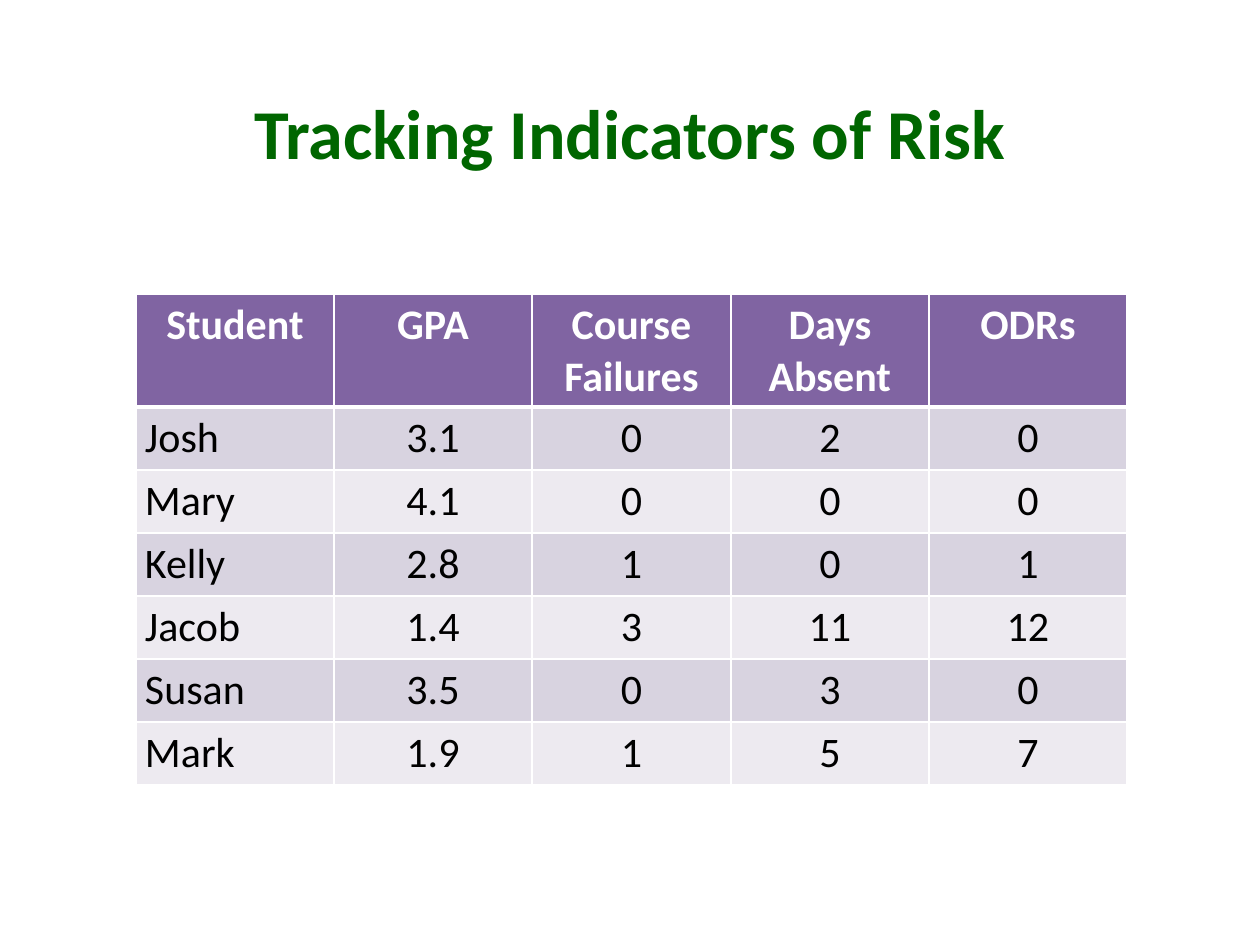
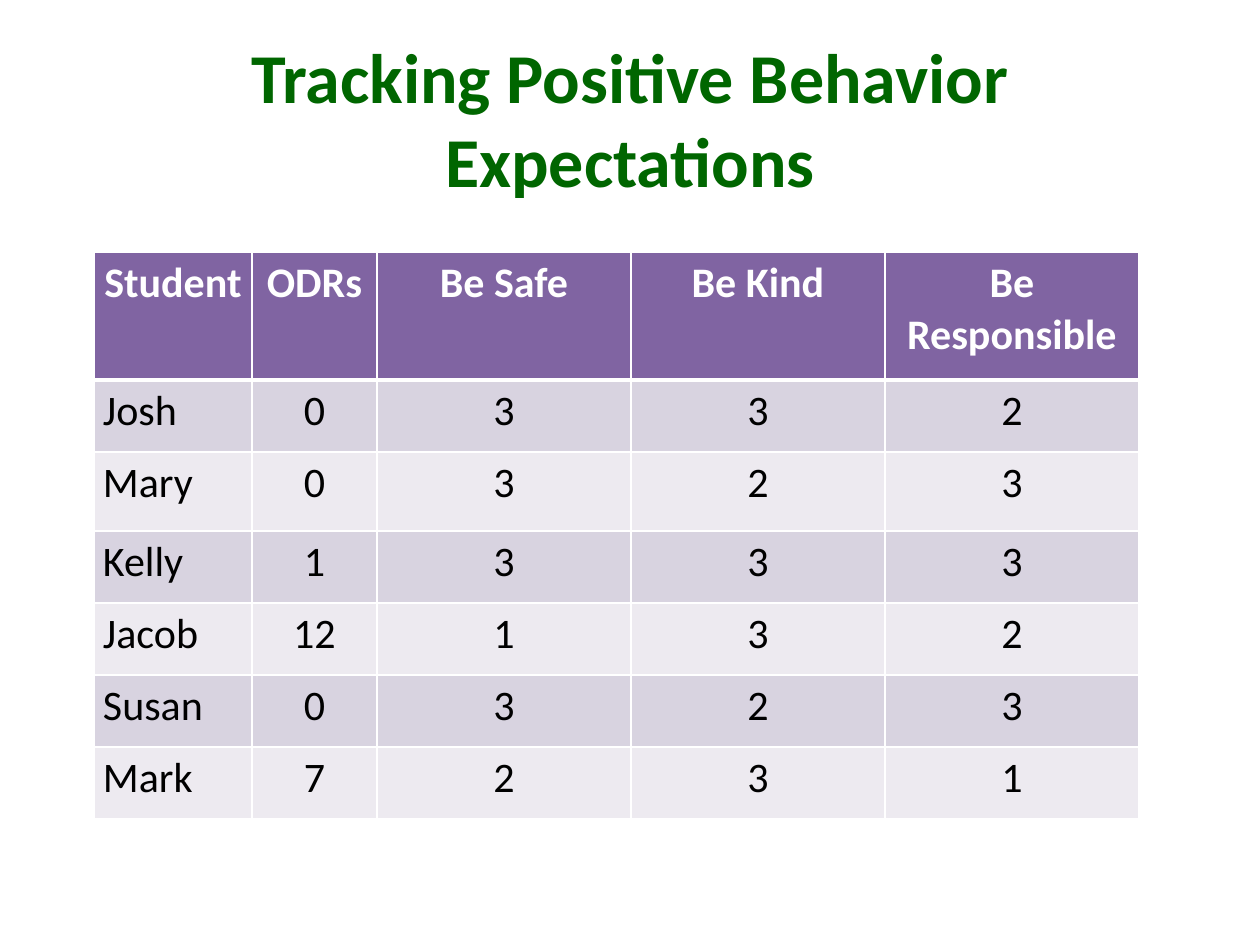
import pptx
import pptx.dml.color
import pptx.enum.text
import pptx.util
import pptx.oxml
import pptx.oxml.ns

FONT = "Calibri"
GREEN, PURPLE, WHITE, BLACK = "006600", "8064A2", "FFFFFF", "000000"
BANDS = ["D8D3E0", "EDEAF0"]
CENTER = pptx.enum.text.PP_ALIGN.CENTER
LEFT = pptx.enum.text.PP_ALIGN.LEFT
TITLE_FORMAT = {"name": FONT, "size": pptx.util.Pt(40), "bold": True}
HEADER_FORMAT = {"name": FONT, "size": pptx.util.Pt(24), "bold": True}
BODY_FORMAT = {**HEADER_FORMAT, "bold": False}
CELL_MARGINS = {"margin_left": 9, "margin_right": 9, "margin_top": 6, "margin_bottom": 6}


def px(length):
    """126 px to the inch."""
    return pptx.util.Emu(round(length * 914400 / 126))


def rgb(hex_color):
    return pptx.dml.color.RGBColor.from_string(hex_color)


trackers = [
    {
        "title": "Tracking Indicators of Risk",
        "title_top": 53,
        "left": 136, "top": 294,
        "columns": [198, 198, 199, 198, 198],
        "rows": [113] + [63] * 6,
        "records": [
            ["Student", "GPA", "Course Failures", "Days Absent", "ODRs"],
            ["Josh", "3.1", "0", "2", "0"],
            ["Mary", "4.1", "0", "0", "0"],
            ["Kelly", "2.8", "1", "0", "1"],
            ["Jacob", "1.4", "3", "11", "12"],
            ["Susan", "3.5", "0", "3", "0"],
            ["Mark", "1.9", "1", "5", "7"],
        ],
    },
    {
        "title": "Tracking Positive Behavior Expectations",
        "title_top": 38,
        "left": 94, "top": 252,
        "columns": [158, 125, 254, 254, 254],
        "rows": [128, 72, 79] + [72] * 4,
        "records": [
            ["Student", "ODRs", "Be Safe", "Be Kind", "Be Responsible"],
            ["Josh", "0", "3", "3", "2"],
            ["Mary", "0", "3", "2", "3"],
            ["Kelly", "1", "3", "3", "3"],
            ["Jacob", "12", "1", "3", "2"],
            ["Susan", "0", "3", "2", "3"],
            ["Mark", "7", "2", "3", "1"],
        ],
    },
]

deck = pptx.Presentation()
deck.slide_width, deck.slide_height = px(1260), px(945)

for tracker in trackers:
    slide = deck.slides.add_slide(deck.slide_layouts[6])

    # Title
    title = slide.shapes.add_textbox(px(63), px(tracker["title_top"]), px(1134), px(158)).text_frame
    title.word_wrap = True
    title.vertical_anchor = pptx.enum.text.MSO_ANCHOR.MIDDLE
    heading = title.paragraphs[0]
    heading.text = tracker["title"]
    heading.alignment = CENTER
    for key, value in TITLE_FORMAT.items():
        setattr(heading.font, key, value)
    heading.font.color.rgb = rgb(GREEN)

    # Student table
    columns, rows, records = tracker["columns"], tracker["rows"], tracker["records"]
    students = slide.shapes.add_table(
        len(rows), len(columns), px(tracker["left"]), px(tracker["top"]),
        px(sum(columns)), px(sum(rows))).table
    for column, width in zip(students.columns, columns):
        column.width = px(width)
    for row, height in zip(students.rows, rows):
        row.height = px(height)

    for r, record in enumerate(records):
        for c, entry in enumerate(record):
            cell = students.cell(r, c)
            for key, value in CELL_MARGINS.items():
                setattr(cell, key, px(value))

            # White rules, heavier beneath the header
            borders = {"lnL": 1, "lnR": 1, "lnT": 3 if r == 1 else 1, "lnB": 3 if r == 0 else 1}
            for side, points in borders.items():
                cell._tc.get_or_add_tcPr().append(pptx.oxml.parse_xml(
                    f'<a:{side} {pptx.oxml.ns.nsdecls("a")} w="{pptx.util.Pt(points)}">'
                    f'<a:solidFill><a:srgbClr val="{WHITE}"/></a:solidFill></a:{side}>'))
            cell.fill.solid()
            cell.fill.fore_color.rgb = rgb(PURPLE if r == 0 else BANDS[(r - 1) % 2])

            # Names align left, everything else is centred
            line = cell.text_frame.paragraphs[0]
            line.text = entry
            line.alignment = LEFT if r and c == 0 else CENTER
            for key, value in (BODY_FORMAT if r else HEADER_FORMAT).items():
                setattr(line.font, key, value)
            line.font.color.rgb = rgb(BLACK if r else WHITE)

deck.save("out.pptx")
